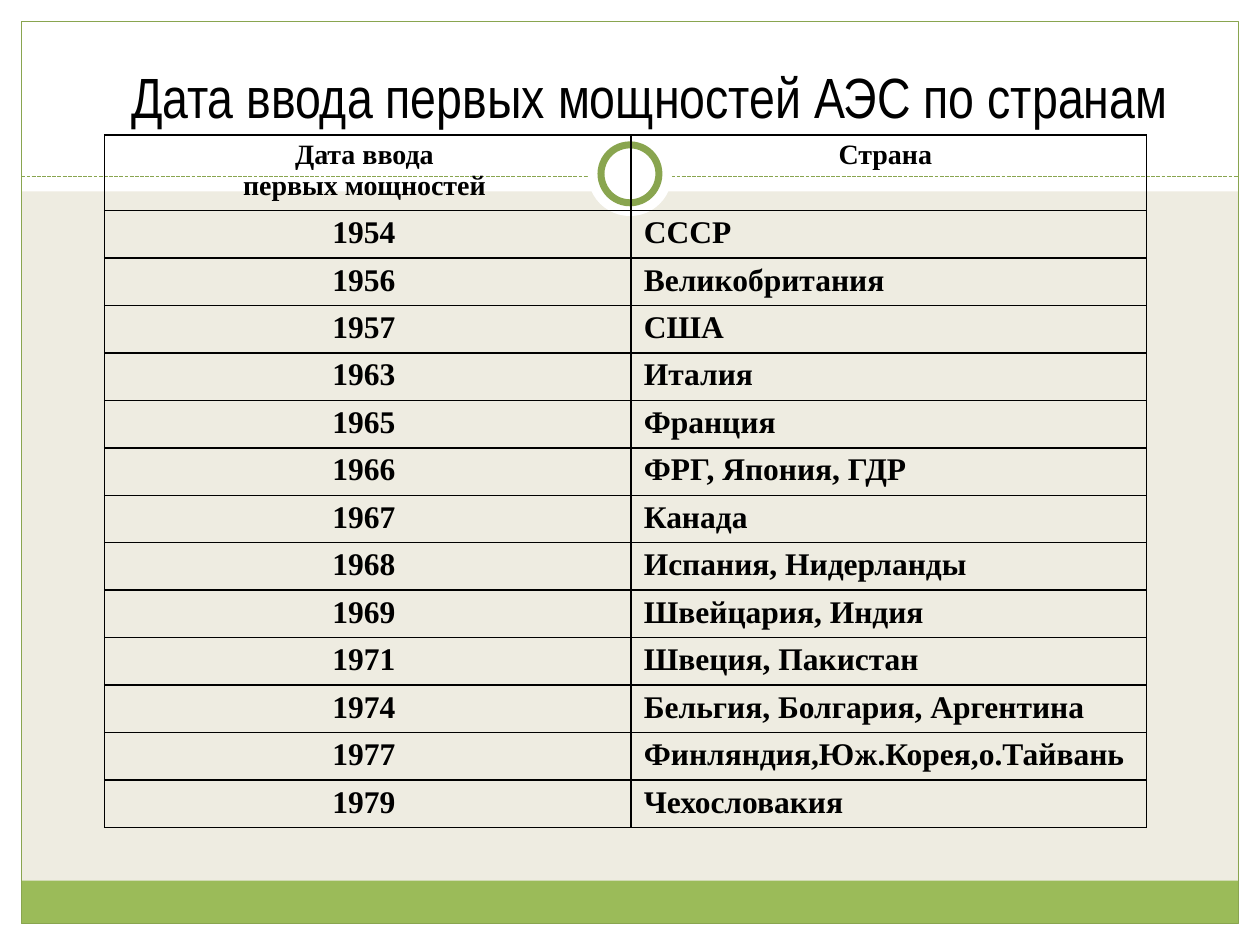
import pptx
import pptx.dml.color
import pptx.enum.dml
import pptx.enum.shapes
import pptx.enum.text
import pptx.oxml
import pptx.oxml.ns
import pptx.util

Inches, Pt = pptx.util.Inches, pptx.util.Pt
ALIGN = pptx.enum.text.PP_ALIGN
SHAPE = pptx.enum.shapes.MSO_SHAPE
WIDTH, HEIGHT, MARGIN = 10, 7.5, 0.17
COLORS = {"paper": "EEECE1", "white": "FFFFFF", "band": "9BBB59",
          "line": "89A54F", "text": "000000"}
HEADERS = [["Дата ввода ", "первых мощностей "], ["Страна "]]
ROWS = [
    (1954, "СССР"), (1956, "Великобритания"), (1957, "США"),
    (1963, "Италия"), (1965, "Франция"), (1966, "ФРГ, Япония, ГДР"),
    (1967, "Канада"), (1968, "Испания, Нидерланды"),
    (1969, "Швейцария, Индия"), (1971, "Швеция, Пакистан"),
    (1974, "Бельгия, Болгария, Аргентина"),
    (1977, "Финляндия,Юж.Корея,о.Тайвань"), (1979, "Чехословакия"),
]


def color(name):
    return pptx.dml.color.RGBColor.from_string(COLORS[name])


def set_all(target, values):
    for name, value in values.items():
        setattr(target, name, value)


def add_box(page, kind, box, fill=None, line=None, weight=0.75):
    shape = page.shapes.add_shape(kind, *map(Inches, box))
    shape.shadow.inherit = False
    if fill:
        shape.fill.solid()
        shape.fill.fore_color.rgb = color(fill)
    else:
        shape.fill.background()
    if line:
        shape.line.color.rgb = color(line)
        shape.line.width = Pt(weight)
    else:
        shape.line.fill.background()


def add_frame(page, box, divider):
    """White margins, green foot band, outline and divider with a ring."""
    left, top, width, height = box
    right, bottom = left + width, top + height
    for strip in [(0, bottom, WIDTH, MARGIN), (0, 0, WIDTH, 1.52),
                  (0, 0, MARGIN, HEIGHT), (right, 0, MARGIN, HEIGHT)]:
        add_box(page, SHAPE.RECTANGLE, strip, "white")
    add_box(page, SHAPE.RECTANGLE, (left, bottom - 0.34, width, 0.34), "band")
    add_box(page, SHAPE.RECTANGLE, box, line="line")

    # Dashed divider
    rule = page.shapes.add_connector(
        pptx.enum.shapes.MSO_CONNECTOR.STRAIGHT,
        *map(Inches, (left, divider, right, divider)))
    rule.line.color.rgb = color("line")
    set_all(rule.line, {"width": Pt(0.75),
                        "dash_style": pptx.enum.dml.MSO_LINE.SQUARE_DOT})
    properties = rule._element.spPr
    properties.append(pptx.oxml.parse_xml(
        f"<a:effectLst {pptx.oxml.ns.nsdecls('a')}/>"))

    # Ring on its white disc
    middle = divider - 0.02
    for size, line in [(0.67, None), (0.46, "line")]:
        ring = (WIDTH / 2 - size / 2, middle - size / 2, size, size)
        add_box(page, SHAPE.OVAL, ring, "white", line, 4)


def write_line(para, text, align, font, size, bold=False):
    para.alignment = align
    span = para.add_run()
    span.text = text
    set_all(span.font, {"name": font, "size": Pt(size), "bold": bold})
    span.font.color.rgb = color("text")


def place_title(page, box, text):
    title = page.shapes.title
    page.shapes._spTree.append(title._element)  # in front of the frame
    set_all(title, dict(zip(("left", "top", "width", "height"),
                            map(Inches, box))))
    set_all(title.text_frame, {
        "word_wrap": True, "auto_size": pptx.enum.text.MSO_AUTO_SIZE.NONE,
        "vertical_anchor": pptx.enum.text.MSO_ANCHOR.BOTTOM,
        "margin_bottom": Inches(box[3] / 2)})
    write_line(title.text_frame.paragraphs[0], text, ALIGN.CENTER,
               "Arial Narrow", 32.4)


def fill_cell(cell, lines, align, size):
    cell.fill.background()
    set_all(cell, {"margin_top": Inches(0.04), "margin_bottom": Inches(0.04)})
    frame = cell.text_frame
    for number, text in enumerate(lines):
        para = frame.add_paragraph() if number else frame.paragraphs[0]
        write_line(para, text, align, "Times New Roman", size, True)
    # Borders come before the fill in the cell properties
    for index, side in enumerate(("lnL", "lnR", "lnT", "lnB")):
        cell._tc.get_or_add_tcPr().insert(index, pptx.oxml.parse_xml(
            f'<a:{side} {pptx.oxml.ns.nsdecls("a")} w="{Pt(1)}"><a:solidFill>'
            f'<a:srgbClr val="{COLORS["text"]}"/></a:solidFill></a:{side}>'))


def add_dates(page, box, header_height):
    table = page.shapes.add_table(
        len(ROWS) + 1, 2, *map(Inches, box)).table
    set_all(table, {"first_row": False, "horz_banding": False})
    for column, width in zip(table.columns, (4.18, box[2] - 4.18)):
        column.width = Inches(width)
    row_height = (box[3] - header_height) / len(ROWS)
    for number, row in enumerate(table.rows):
        row.height = Inches(row_height if number else header_height)
    for column, lines in enumerate(HEADERS):
        fill_cell(table.cell(0, column), lines, ALIGN.CENTER, 16)
    for number, (year, country) in enumerate(ROWS, 1):
        fill_cell(table.cell(number, 0), [f"{year} "], ALIGN.CENTER, 18)
        fill_cell(table.cell(number, 1), [f"{country} "], ALIGN.JUSTIFY, 18)


def main():
    deck = pptx.Presentation()
    set_all(deck, {"slide_width": Inches(WIDTH),
                   "slide_height": Inches(HEIGHT)})
    page = deck.slides.add_slide(deck.slide_layouts[5])
    page.background.fill.solid()
    page.background.fill.fore_color.rgb = color("paper")
    add_frame(page, (MARGIN, MARGIN, WIDTH - 2 * MARGIN, HEIGHT - 2 * MARGIN),
              1.4)
    place_title(page, (0.59, 0.52, 9.13, 1.02),
                "Дата ввода первых мощностей АЭС по странам")
    add_dates(page, (0.83, 1.07, 8.27, 5.5), 0.6)
    deck.save("out.pptx")


if __name__ == "__main__":
    main()
